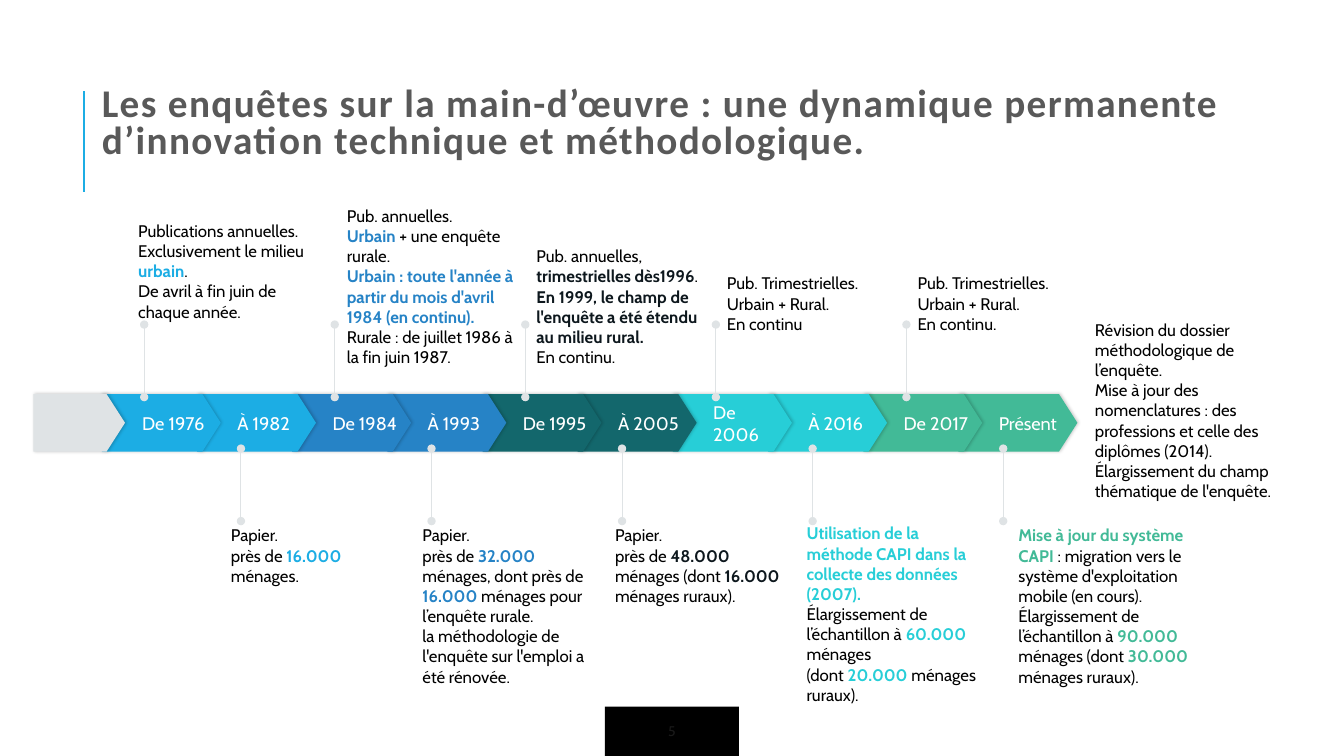
from dataclasses import dataclass

from lxml import etree
from pptx import Presentation
from pptx.dml.color import RGBColor
from pptx.enum import shapes, text
from pptx.oxml import ns
from pptx.util import Inches, Pt

BLACK = RGBColor(0x00, 0x00, 0x00)
WHITE = RGBColor(0xFF, 0xFF, 0xFF)
GREY = RGBColor(0xDF, 0xE3, 0xE5)
TITLE_GREY = RGBColor(0x59, 0x59, 0x59)
NUMBER_GREY = RGBColor(0x1A, 0x1A, 0x1A)
NIGHT = RGBColor(0x0D, 0x17, 0x1D)
SKY = RGBColor(0x1C, 0xAD, 0xE4)
BLUE = RGBColor(0x26, 0x83, 0xC6)
PETROL = RGBColor(0x13, 0x67, 0x6C)
TURQUOISE = RGBColor(0x27, 0xCE, 0xD7)
GREEN = RGBColor(0x42, 0xBA, 0x97)

FONT = "Cabin"
STEP_PITCH = 0.944
PERIOD_PITCH = 1.89
TOP, BOTTOM = text.MSO_ANCHOR.TOP, text.MSO_ANCHOR.BOTTOM


@dataclass
class Period:
    start: str
    end: str
    color: RGBColor


@dataclass
class Caption:
    """Text beside the timeline; parts between asterisks are bold and accented."""
    left: float
    top: float
    anchor: text.MSO_ANCHOR
    accent: RGBColor
    paragraphs: list[str]


PERIODS = [
    Period("De 1976", "À 1982", SKY),
    Period("De 1984", "À 1993", BLUE),
    Period("De 1995", "À 2005", PETROL),
    Period("De 2006", "À 2016", TURQUOISE),
    Period("De 2017", "Présent", GREEN),
]

CAPTIONS = [
    Caption(1.37, 2.41, BOTTOM, SKY, [
        "Publications annuelles. Exclusivement le milieu *urbain*.",
        "De avril à fin juin de chaque année."]),
    Caption(3.44, 2.86, BOTTOM, BLUE, [
        "Pub. annuelles.",
        "*Urbain* + une enquête rurale.",
        "*Urbain : toute l'année à partir du mois d'avril 1984 (en continu).*",
        "Rurale : de juillet 1986 à la fin juin 1987."]),
    Caption(5.32, 2.86, BOTTOM, NIGHT, [
        "Pub. annuelles,",
        "*trimestrielles dès1996*.",
        "*En 1999, le champ de l'enquête a été étendu au milieu rural.*",
        "En continu."]),
    Caption(7.21, 2.53, BOTTOM, TURQUOISE, [
        "Pub. Trimestrielles.", "Urbain + Rural.", "En continu"]),
    Caption(9.1, 2.53, BOTTOM, GREEN, [
        "Pub. Trimestrielles.", "Urbain + Rural.", "En continu."]),
    Caption(10.86, 4.19, BOTTOM, GREEN, [
        "Révision du dossier méthodologique de l’enquête.",
        "Mise à jour des nomenclatures : des professions et celle des diplômes (2014).",
        "Élargissement du champ thématique de l'enquête."]),
    Caption(2.29, 5.21, TOP, SKY, [
        "Papier.", "près de *16.000 *ménages."]),
    Caption(4.19, 5.21, TOP, BLUE, [
        "Papier.",
        "près de *32.000 *ménages, dont près de *16.000* ménages pour l’enquête rurale.",
        "la méthodologie de l'enquête sur l'emploi a été rénovée."]),
    Caption(6.1, 5.21, TOP, NIGHT, [
        "Papier.",
        "près de *48.000 *ménages (dont *16.000* ménages ruraux)."]),
    Caption(8, 5.19, TOP, TURQUOISE, [
        "*Utilisation de la méthode CAPI dans la collecte des données (2007).*",
        "Élargissement de l’échantillon à *60.000* ménages",
        "(dont *20.000* ménages ruraux)."]),
    Caption(10.1, 5.21, TOP, GREEN, [
        "*Mise à jour du système CAPI *: migration vers le système d'exploitation "
        "mobile (en cours).",
        "Élargissement de l’échantillon à *90.000* ménages (dont *30.000* ménages ruraux)."]),
]


def set_margins(tf, left: float, top: float, right: float, bottom: float) -> None:
    tf.margin_left, tf.margin_top = Inches(left), Inches(top)
    tf.margin_right, tf.margin_bottom = Inches(right), Inches(bottom)


def style_font(font, size: float, color: RGBColor, bold: bool = False,
               name: str = FONT) -> None:
    font.name, font.size, font.bold = name, Pt(size), bold
    font.color.rgb = color


def add_filled(s, kind, left: float, top: float, width: float, height: float,
               color: RGBColor):
    sp = s.shapes.add_shape(kind, Inches(left), Inches(top), Inches(width), Inches(height))
    sp.shadow.inherit = False
    sp.fill.solid()
    sp.fill.fore_color.rgb = color
    sp.line.fill.background()
    return sp


def add_step(s, left: float, width: float, color: RGBColor, label: str = "") -> None:
    """Draw one arrow of the timeline with its soft shadow."""
    sp = add_filled(s, shapes.MSO_SHAPE.PENTAGON, left, 3.91, width, 0.57, color)
    sp.adjustments[0] = 0.32
    effects = sp._element.spPr.find(ns.qn("a:effectLst"))
    shadow = etree.SubElement(effects, ns.qn("a:outerShdw"), blurRad=str(Pt(2.2)),
                              dist=str(Pt(0.8)), dir="0", algn="ctr", rotWithShape="0")
    shade = etree.SubElement(shadow, ns.qn("a:srgbClr"), val=str(BLACK))
    etree.SubElement(shade, ns.qn("a:alpha"), val="20000")
    if label:
        tf = sp.text_frame
        tf.text = label
        tf.word_wrap = True
        tf.vertical_anchor = text.MSO_ANCHOR.MIDDLE
        set_margins(tf, 0.4, 0, 0, 0)
        p = tf.paragraphs[0]
        p.alignment = text.PP_ALIGN.LEFT
        style_font(p.runs[0].font, 13, WHITE)


def add_line(s, x: float, y1: float, y2: float, color: RGBColor, width: float,
             dots: bool = False) -> None:
    cx = s.shapes.add_connector(shapes.MSO_CONNECTOR.STRAIGHT, Inches(x), Inches(y1),
                                Inches(x), Inches(y2))
    cx.line.color.rgb = color
    cx.line.width = Pt(width)
    etree.SubElement(cx._element.spPr, ns.qn("a:effectLst"))
    if dots:
        ln = cx.line._get_or_add_ln()
        for end in ("a:headEnd", "a:tailEnd"):
            etree.SubElement(ln, ns.qn(end), type="oval")


def add_caption(s, caption: Caption) -> None:
    sp = s.shapes.add_textbox(Inches(caption.left), Inches(caption.top),
                              Inches(1.79), Inches(0.78))
    tf = sp.text_frame
    tf.word_wrap = True
    tf.vertical_anchor = caption.anchor
    set_margins(tf, 0, 0, 0, 0)
    for i, line in enumerate(caption.paragraphs):
        p = tf.add_paragraph() if i else tf.paragraphs[0]
        for j, part in enumerate(line.split("*")):
            if part:
                r = p.add_run()
                r.text = part
                accented = j % 2 == 1
                style_font(r.font, 12, caption.accent if accented else BLACK, accented)


def add_title(s) -> None:
    sp = s.shapes.title
    sp.left, sp.top, sp.width, sp.height = map(Inches, (0.88, 0.2, 12.22, 1.47))
    tf = sp.text_frame
    tf.text = ("Les enquêtes sur la main-d’œuvre : une dynamique permanente "
               "d’innovation technique et méthodologique.")
    tf.word_wrap = True
    tf.auto_size = text.MSO_AUTO_SIZE.NONE
    tf.vertical_anchor = BOTTOM
    set_margins(tf, 0.13, 0.13, 0.13, 0.06)
    p = tf.paragraphs[0]
    p.alignment = text.PP_ALIGN.LEFT
    p.line_spacing = 0.8
    r = p.runs[0]
    style_font(r.font, 28, TITLE_GREY, True, "Calibri")
    r.font._element.set("spc", "100")


def add_page_number(s) -> None:
    sp = add_filled(s, shapes.MSO_SHAPE.RECTANGLE, 6, 7.01, 1.33, 0.49, BLACK)
    sp.text_frame.text = "5"
    p = sp.text_frame.paragraphs[0]
    p.alignment = text.PP_ALIGN.CENTER
    style_font(p.runs[0].font, 10, NUMBER_GREY)


def main() -> None:
    prs = Presentation()
    prs.slide_width, prs.slide_height = Inches(13.33), Inches(7.5)
    s = prs.slides.add_slide(prs.slide_layouts[5])
    add_line(s, 0.83, 1.9, 0.9, SKY, 1.5)
    add_page_number(s)
    add_title(s)
    steps = [(label, p.color) for p in PERIODS for label in (p.start, p.end)]
    for i, (label, color) in reversed(list(enumerate(steps))):
        add_step(s, 1.01 + i * STEP_PITCH, 1.18, color, label)
    add_step(s, 0.33, 0.91, GREY)
    for i in range(len(PERIODS)):
        add_line(s, 1.43 + i * PERIOD_PITCH, 3.94, 3.22, GREY, 0.75, dots=True)
        add_line(s, 2.39 + i * PERIOD_PITCH, 5.17, 4.45, GREY, 0.75, dots=True)
    for caption in CAPTIONS:
        add_caption(s, caption)
    prs.save("out.pptx")


if __name__ == "__main__":
    main()
